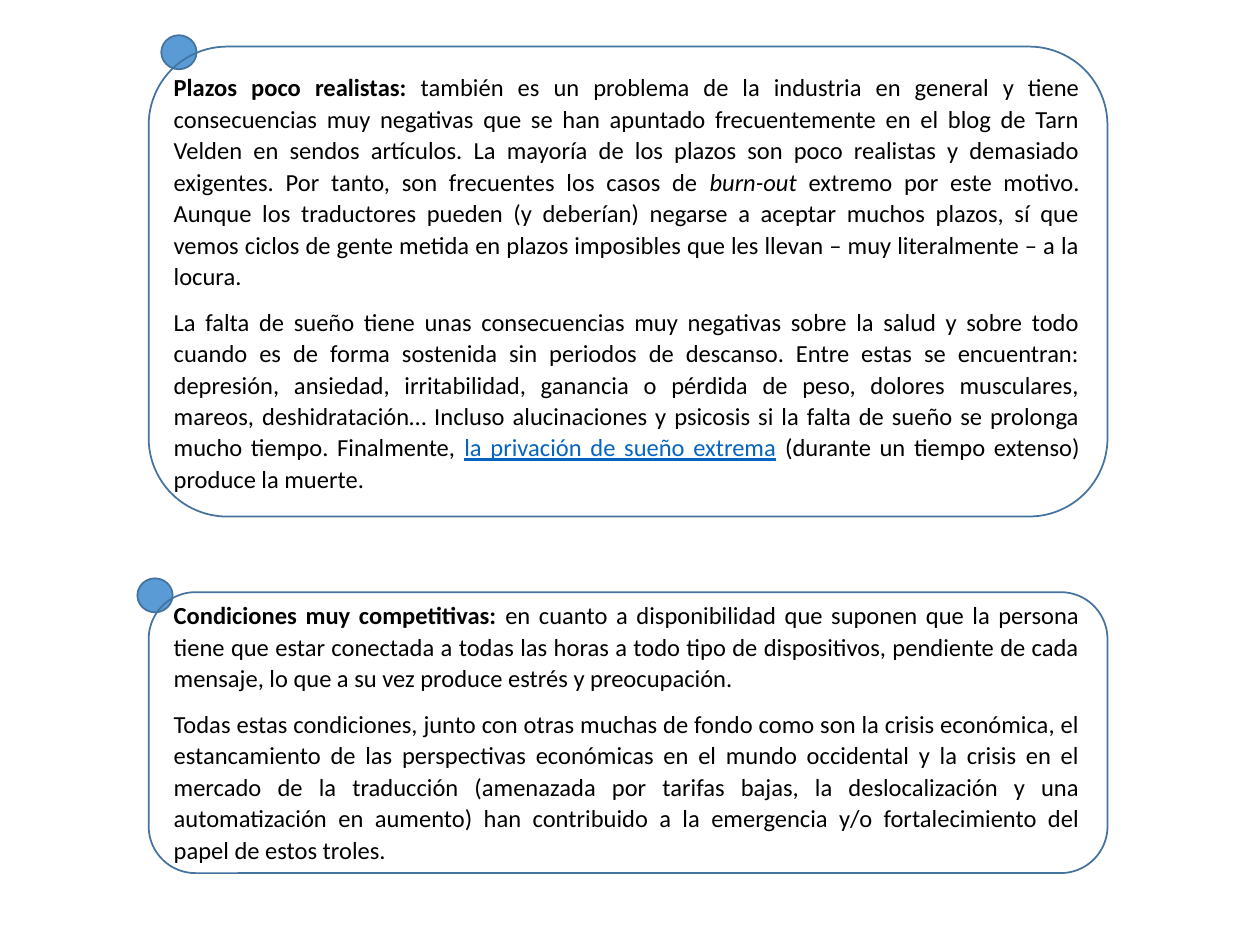
"""Build a slide with two outlined text cards, each marked by a dot."""
from pptx import Presentation
from pptx.dml.color import RGBColor as Rgb
from pptx.enum.shapes import MSO_SHAPE as Kind
from pptx.enum.text import MSO_AUTO_SIZE as Fit, PP_ALIGN as Align
from pptx.util import Inches, Pt

HUES = {"text": "000000", "link": "0563C1", "dot": "5B9BD5", "edge": "43739E"}

TERMS = [
    [
        ("Plazos poco realistas:", "bold"),
        (" también es un problema de la industria en general y tiene "
         "consecuencias muy negativas que se han apuntado frecuentemente en "
         "el blog de Tarn Velden en sendos artículos. La mayoría de los "
         "plazos son poco realistas y demasiado exigentes. Por tanto, son "
         "frecuentes los casos de ", ""),
        ("burn-out", "italic"),
        (" extremo por este motivo. Aunque los traductores pueden (y "
         "deberían) negarse a aceptar muchos plazos, sí que vemos ciclos de "
         "gente metida en plazos imposibles que les llevan – muy "
         "literalmente – a la locura.", ""),
    ],
    [
        ("La falta de sueño tiene unas consecuencias muy negativas sobre la "
         "salud y sobre todo cuando es de forma sostenida sin periodos de "
         "descanso. Entre estas se encuentran: depresión, ansiedad, "
         "irritabilidad, ganancia o pérdida de peso, dolores musculares, "
         "mareos, deshidratación… Incluso alucinaciones y psicosis si la "
         "falta de sueño se prolonga mucho tiempo. Finalmente, ", ""),
        ("la privación de sueño extrema", "link"),
        (" (durante un tiempo extenso) produce la muerte.", ""),
    ],
]

RIVALS = [
    [
        ("Condiciones muy competitivas:", "bold"),
        (" en cuanto a disponibilidad que suponen que la persona tiene que "
         "estar conectada a todas las horas a todo tipo de dispositivos, "
         "pendiente de cada mensaje, lo que a su vez produce estrés y "
         "preocupación.", ""),
    ],
    [
        ("Todas estas condiciones, junto con otras muchas de fondo como son "
         "la crisis económica, el estancamiento de las perspectivas "
         "económicas en el mundo occidental y la crisis en el mercado de la "
         "traducción (amenazada por tarifas bajas, la deslocalización y una "
         "automatización en aumento) han contribuido a la emergencia y/o "
         "fortalecimiento del papel de estos troles.", ""),
    ],
]


class Deck:
    """Hold the style and the current slide."""

    font, size = "Calibri", Pt(14)

    def __init__(self):
        self.prs = Presentation()
        self.prs.slide_width, self.prs.slide_height = Inches(10), Inches(7.5)
        self.slide = self.prs.slides.add_slide(self.prs.slide_layouts[6])

    def shape(self, kind, area, fill=None):
        """Add an outlined shape, filled if a colour is named."""
        item = self.slide.shapes.add_shape(kind, *map(Inches, area))
        item.shadow.inherit = False
        if fill:
            item.fill.solid()
            item.fill.fore_color.rgb = Rgb.from_string(HUES[fill])
        else:
            item.fill.background()
        item.line.color.rgb = Rgb.from_string(HUES["edge"])
        item.line.width = Pt(1)

    def text(self, area, paras):
        """Add a box of justified paragraphs made of styled runs."""
        frame = self.slide.shapes.add_textbox(*map(Inches, area)).text_frame
        frame.word_wrap = True
        frame.auto_size = Fit.SHAPE_TO_FIT_TEXT
        for num, parts in enumerate(paras):
            para = frame.add_paragraph() if num else frame.paragraphs[0]
            para.alignment = Align.JUSTIFY
            para.line_spacing = 1.07
            para.space_after = Pt(8)
            for words, look in parts:
                self.run(para, words, look)

    def run(self, para, words, look):
        """Add one run in the look that is named."""
        run = para.add_run()
        run.text = words
        font = run.font
        font.name, font.size = self.font, self.size
        font.bold = look == "bold"
        font.italic = look == "italic"
        font.underline = look == "link"
        hue = HUES["link" if look == "link" else "text"]
        font.color.rgb = Rgb.from_string(hue)

    def card(self, dot, top, high, text_top, text_high, paras):
        """Add a dot, its text and the rounded frame around it."""
        self.shape(Kind.OVAL, (*dot, 0.28, 0.27), "dot")
        self.text((1.28, text_top, 7.39, text_high), paras)
        self.shape(Kind.ROUNDED_RECTANGLE, (1.18, top, 7.61, high))


def main():
    deck = Deck()
    deck.card((1.28, 0.28), 0.37, 3.73, 0.51, 3.49, TERMS)
    deck.card((1.09, 4.59), 4.7, 2.23, 4.7, 2.23, RIVALS)
    deck.prs.save("out.pptx")


if __name__ == "__main__":
    main()
